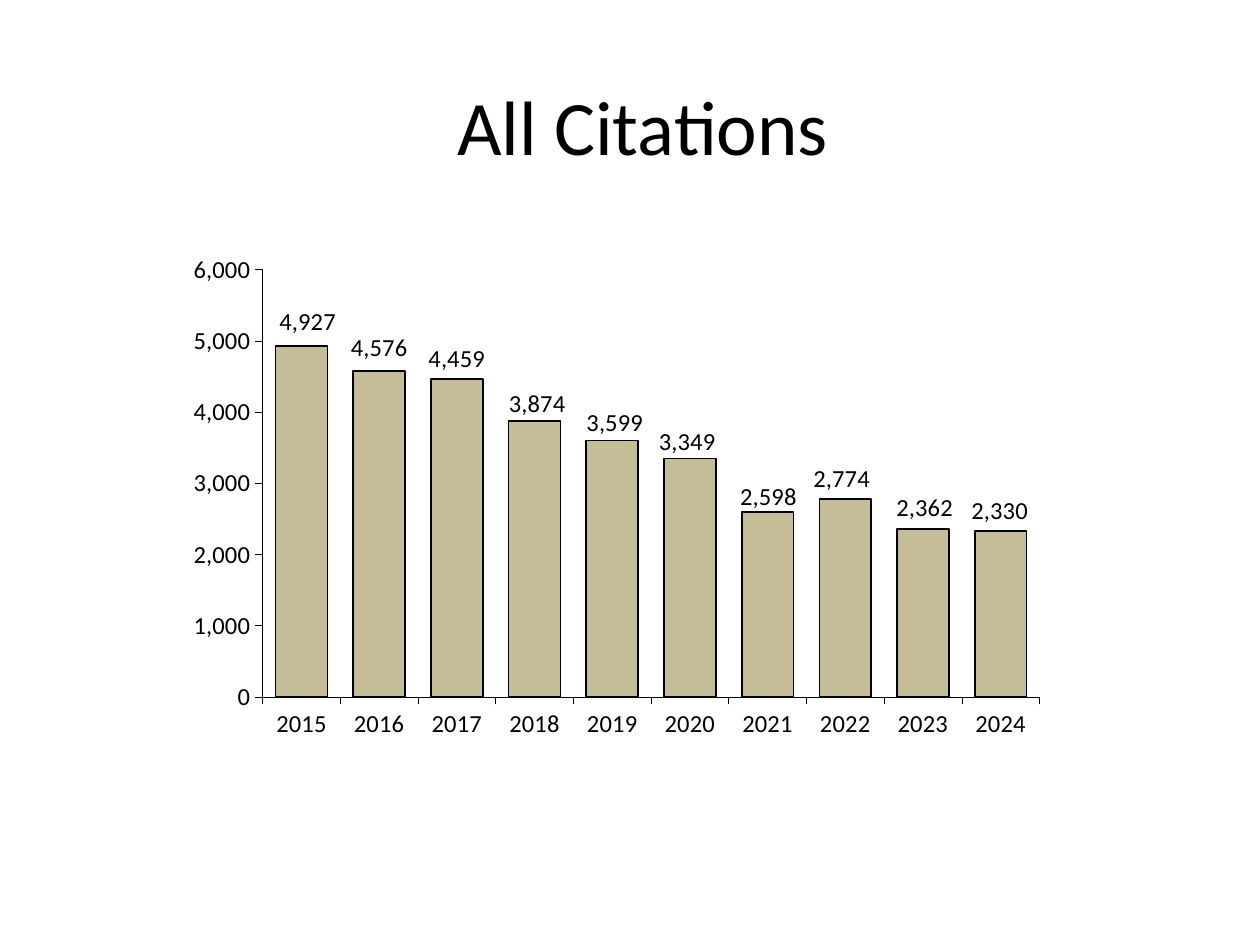
from dataclasses import dataclass

from lxml.etree import SubElement
from pptx import Presentation
from pptx.chart.data import CategoryChartData
from pptx.dml.color import RGBColor
from pptx.enum.chart import XL_CHART_TYPE, XL_LABEL_POSITION, XL_TICK_MARK
from pptx.enum.text import MSO_ANCHOR, PP_ALIGN
from pptx.oxml.ns import qn
from pptx.util import Cm, Pt

BLACK = RGBColor(0x00, 0x00, 0x00)
TAN = RGBColor(0xC4, 0xBD, 0x97)
FONT = "Calibri"
THOUSANDS = "#,##0"


@dataclass
class YearCount:
    year: str
    citations: int
    label_dx: float  # label shift as a fraction of the chart width
    label_dy: float  # label shift as a fraction of the chart height


COUNTS = [
    YearCount("2015", 4927, 0.007, -0.008),
    YearCount("2016", 4576, 0, -0.006),
    YearCount("2017", 4459, 0, 0),
    YearCount("2018", 3874, 0.003, 0.006),
    YearCount("2019", 3599, 0.003, 0.004),
    YearCount("2020", 3349, -0.003, 0.008),
    YearCount("2021", 2598, 0.001, 0.01),
    YearCount("2022", 2774, -0.004, 0),
    YearCount("2023", 2362, 0.002, -0.002),
    YearCount("2024", 2330, -0.001, 0),
]


def style_font(font, size: int) -> None:
    font.name = FONT
    font.size = Pt(size)
    font.color.rgb = BLACK


def style_line(line, width: float) -> None:
    line.color.rgb = BLACK
    line.width = Pt(width)


def add_manual_layout(layout, **settings) -> None:
    manual = SubElement(layout, qn("c:manualLayout"))
    for tag, value in settings.items():
        SubElement(manual, qn(f"c:{tag}")).set("val", str(value))


def style_axis(axis) -> None:
    axis.has_major_gridlines = False
    axis.major_tick_mark = XL_TICK_MARK.OUTSIDE
    axis.minor_tick_mark = XL_TICK_MARK.NONE
    style_font(axis.tick_labels.font, 14)
    style_line(axis.format.line, 0.25)


def place_label(series, index: int, count: YearCount) -> None:
    label = series.points[index].data_label
    style_font(label.font, 14)
    label.position = XL_LABEL_POSITION.OUTSIDE_END
    entry = series.format._element.findall(f".//{qn('c:dLbl')}")[index]
    layout = entry.makeelement(qn("c:layout"))
    entry.find(qn("c:idx")).addnext(layout)
    add_manual_layout(layout, x=count.label_dx, y=count.label_dy)


def add_citations_chart(slide) -> None:
    data = CategoryChartData(number_format=THOUSANDS)
    data.categories = [count.year for count in COUNTS]
    data.add_series("Series 1", [count.citations for count in COUNTS])
    chart = slide.shapes.add_chart(
        XL_CHART_TYPE.COLUMN_CLUSTERED, Cm(3.18), Cm(5.08), Cm(17.78), Cm(10.16), data
    ).chart
    chart.has_legend = False
    chart.has_title = False
    style_font(chart.font, 16)

    # Axes
    style_axis(chart.category_axis)
    style_axis(chart.value_axis)
    chart.value_axis.minimum_scale = 0
    chart.value_axis.maximum_scale = 6000
    chart.value_axis.major_unit = 1000
    chart.value_axis.tick_labels.number_format = THOUSANDS
    chart.value_axis.tick_labels.number_format_is_linked = False

    # Columns
    plot = chart.plots[0]
    plot.gap_width = 50
    plot.overlap = 100
    plot.vary_by_categories = False
    citations = plot.series[0]
    citations.format.fill.solid()
    citations.format.fill.fore_color.rgb = TAN
    style_line(citations.format.line, 1)

    # Value labels
    labels = citations.data_labels
    labels.show_value = True
    labels.number_format = THOUSANDS
    labels.number_format_is_linked = False
    labels.position = XL_LABEL_POSITION.OUTSIDE_END
    style_font(labels.font, 14)
    for index, count in enumerate(COUNTS):
        place_label(citations, index, count)

    # Plot area position
    plot_area = chart.element.find(f".//{qn('c:plotArea')}")
    layout = plot_area.find(qn("c:layout"))
    if layout is None:
        layout = plot_area.makeelement(qn("c:layout"))
        plot_area.insert(0, layout)
    add_manual_layout(layout, layoutTarget="inner", xMode="edge", yMode="edge",
                      x=0.119, y=0.035, w=0.881, h=0.848)


def add_title(slide) -> None:
    title = slide.shapes.title
    title.left, title.top, title.width, title.height = Cm(2.34), Cm(0.97), Cm(21.59), Cm(3.07)
    frame = title.text_frame
    frame.text = "All Citations "
    frame.vertical_anchor = MSO_ANCHOR.MIDDLE
    heading = frame.paragraphs[0]
    heading.alignment = PP_ALIGN.CENTER
    style_font(heading.runs[0].font, 44)


def main() -> None:
    deck = Presentation()
    deck.slide_width, deck.slide_height = Cm(25.4), Cm(19.05)
    slide = deck.slides.add_slide(deck.slide_layouts[5])
    add_title(slide)
    add_citations_chart(slide)
    deck.save("out.pptx")


if __name__ == "__main__":
    main()
